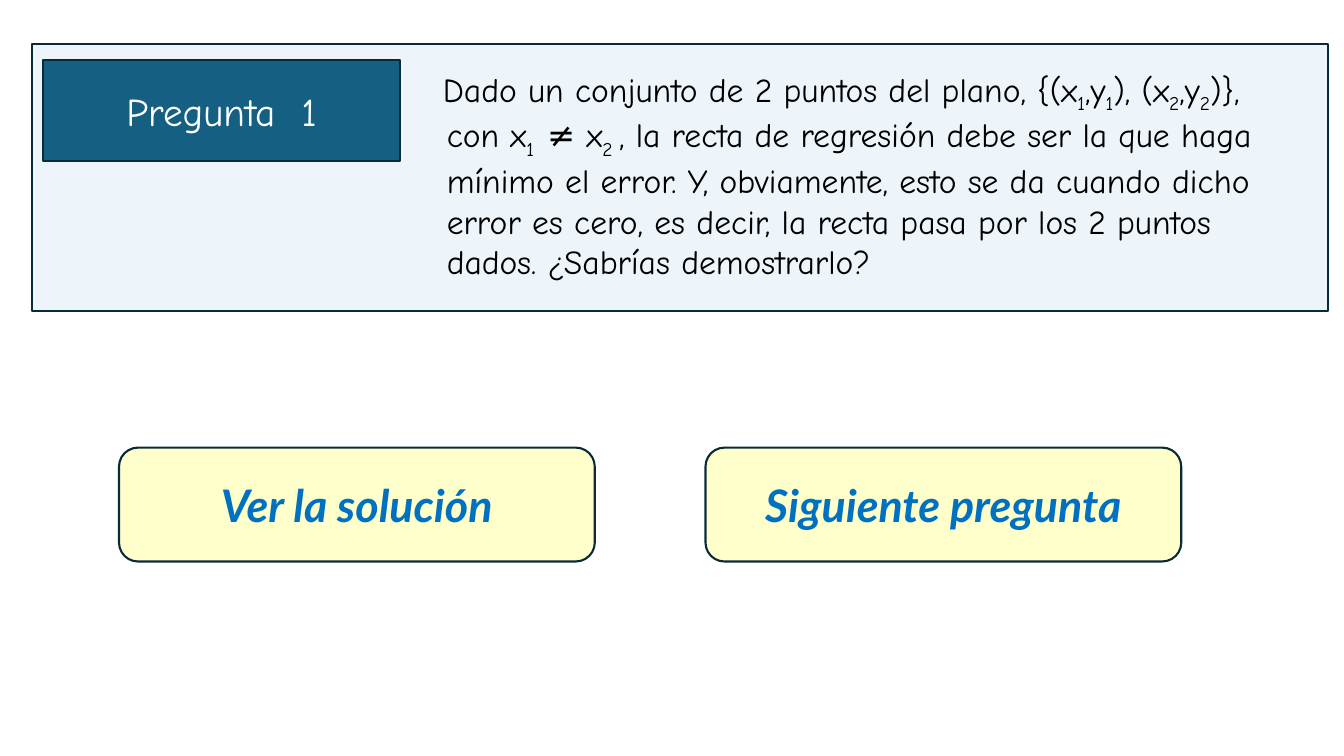
from lxml.etree import SubElement
from pptx import Presentation
from pptx.dml.color import RGBColor
from pptx.enum.shapes import MSO_SHAPE as Preset
from pptx.enum.text import MSO_ANCHOR as Anchor, PP_ALIGN as Align
from pptx.oxml.ns import qn
from pptx.util import Cm, Pt

HEADING = "Pregunta  1"
STATEMENT = [
    [("Dado un conjunto de 2 puntos del plano, {(x", False), ("1", True),
     (",y", False), ("1", True), ("), (x", False), ("2", True),
     (",y", False), ("2", True), (")},", False)],
    [("con x", False), ("1  ", True), ("≠ x", False), ("2 ", True),
     (", la recta de regresión debe ser la que haga", False)],
    [("mínimo el error. Y, obviamente, esto se da cuando dicho", False)],
    [("error es cero, es decir, la recta pasa por los 2 puntos", False)],
    [("dados. ¿Sabrías demostrarlo?", False)],
]
BUTTONS = ["Ver la solución", "Siguiente pregunta"]

HAND, SANS = "Comic Neue", "Lato"
NAVY, TEAL, PALE, CREAM, BLUE = "092A39", "156082", "DCEAF7", "FFFFCC", "0070C0"
PANEL_BOX = (0.81, 1.12, 32.66, 6.71)
BADGE_BOX = (1.09, 1.52, 8.99, 2.54)
STATEMENT_BOX = (10.72, 1.6, 22.76, 5.38)
BUTTON_LEFT, BUTTON_TOP, BUTTON_STEP = 3, 11.28, 14.78
BUTTON_SIZE = (11.99, 2.87)


def rgb(color):
    return RGBColor.from_string(color)


def paint(shape, fill):
    shape.fill.solid()
    shape.fill.fore_color.rgb = rgb(fill)
    shape.line.color.rgb = rgb(NAVY)
    shape.line.width = Pt(1.5)
    shape.shadow.inherit = False


def add_box(slide, preset, box, fill):
    shape = slide.shapes.add_shape(preset, *map(Cm, box))
    paint(shape, fill)
    return shape


def add_run(paragraph, text, size, face, color, emphasis=False):
    run = paragraph.add_run()
    run.text = text
    run.font.size = Pt(size)
    run.font.name = face
    run.font.color.rgb = rgb(color)
    run.font.bold = run.font.italic = emphasis
    return run


def write_label(shape, *style):
    frame = shape.text_frame
    frame.word_wrap = True
    frame.vertical_anchor = Anchor.MIDDLE
    label = frame.paragraphs[0]
    label.alignment = Align.CENTER
    add_run(label, *style)


def add_panel(slide):
    panel = add_box(slide, Preset.RECTANGLE, PANEL_BOX, PALE)
    tint = panel.fill._xPr.find(".//" + qn("a:srgbClr"))
    SubElement(tint, qn("a:alpha"), val="50000")


def add_statement(slide):
    frame = slide.shapes.add_textbox(*map(Cm, STATEMENT_BOX)).text_frame
    frame.word_wrap = True
    for number, line in enumerate(STATEMENT):
        paragraph = frame.add_paragraph() if number else frame.paragraphs[0]
        indent = paragraph._p.get_or_add_pPr()
        indent.set("marL", str(Cm(0.29)))
        indent.set("indent", str(0 if number else Cm(-0.1)))
        for text, subscript in line:
            run = add_run(paragraph, text, 24, HAND, "000000")
            if subscript:
                run.font._element.set("baseline", "-25000")


def place_heading(slide):
    heading = slide.shapes.title
    heading.left, heading.top, heading.width, heading.height = map(Cm, BADGE_BOX)
    outline = SubElement(heading._element.spPr, qn("a:prstGeom"), prst="roundRect")
    SubElement(outline, qn("a:avLst"))
    paint(heading, TEAL)
    write_label(heading, HEADING, 28, HAND, "FFFFFF")
    slide.shapes._spTree.append(heading._element)


def main():
    deck = Presentation()
    deck.slide_width, deck.slide_height = Cm(33.87), Cm(19.05)
    slide = deck.slides.add_slide(deck.slide_layouts[5])
    add_panel(slide)
    add_statement(slide)
    place_heading(slide)
    for column, caption in enumerate(BUTTONS):
        box = (BUTTON_LEFT + column * BUTTON_STEP, BUTTON_TOP, *BUTTON_SIZE)
        button = add_box(slide, Preset.ROUNDED_RECTANGLE, box, CREAM)
        write_label(button, caption, 32, SANS, BLUE, True)
    deck.save("out.pptx")


if __name__ == "__main__":
    main()
